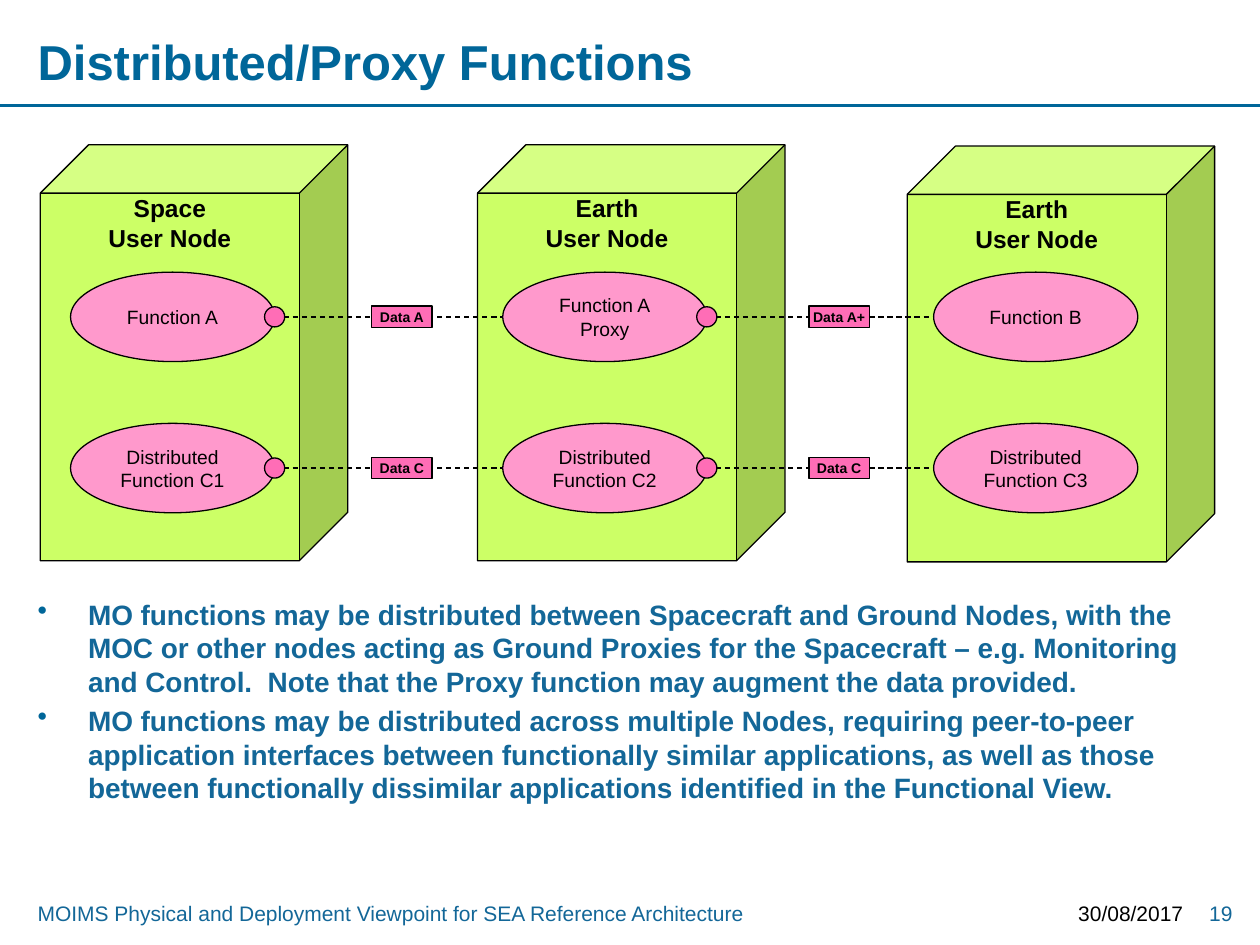
from lxml import etree
from pptx import Presentation
from pptx.dml.color import RGBColor
from pptx.enum.dml import MSO_LINE
from pptx.enum.shapes import MSO_CONNECTOR, MSO_SHAPE
from pptx.enum.text import MSO_ANCHOR, PP_ALIGN
from pptx.oxml.ns import qn
from pptx.util import Inches, Pt

CUBE, OVAL, RECT = MSO_SHAPE.CUBE, MSO_SHAPE.OVAL, MSO_SHAPE.RECTANGLE
STRAIGHT, DASH = MSO_CONNECTOR.STRAIGHT, MSO_LINE.DASH
LEFT, CENTER, RIGHT = PP_ALIGN.LEFT, PP_ALIGN.CENTER, PP_ALIGN.RIGHT
TOP, MIDDLE = MSO_ANCHOR.TOP, MSO_ANCHOR.MIDDLE

BLUE = RGBColor(0x00, 0x66, 0x99)
TEXT_BLUE = RGBColor(0x13, 0x67, 0x98)
BLACK = RGBColor(0, 0, 0)
GREEN = RGBColor(0xCC, 0xFF, 0x66)
PINK = RGBColor(0xFF, 0x99, 0xCC)
HOT_PINK = RGBColor(0xFF, 0x6D, 0xB6)

# Content
TITLE = "Distributed/Proxy Functions"
BULLETS = [
    "MO functions may be distributed between Spacecraft and Ground Nodes, with the MOC or "
    "other nodes acting as Ground Proxies for the Spacecraft – e.g. Monitoring and Control.  "
    "Note that the Proxy function may augment the data provided.",
    "MO functions may be distributed across multiple Nodes, requiring peer-to-peer application "
    "interfaces between functionally similar applications, as well as those between "
    "functionally dissimilar applications identified in the Functional View.",
]
FOOTER = "MOIMS Physical and Deployment Viewpoint for SEA Reference Architecture"
DATE, PAGE = "30/08/2017", "19"

# Each node: cube left, cube top, function left, heading lines
NODES = [
    (0.32, 1.15, 0.56, ["Space", "User Node"]),
    (3.79, 1.15, 3.99, ["Earth", "User Node"]),
    (7.2, 1.16, 7.41, ["Earth", "User Node"]),
]
# Each row: top, one function per node (as paragraphs), data passed across each gap
ROWS = [
    (2.16, [["Function A"], ["Function A\vProxy"], ["Function B"]], ["Data A", "Data A+"]),
    (3.36, [["Distributed", "Function C1"], ["Distributed Function C2"],
            ["Distributed Function C3"]], ["Data C", "Data C"]),
]
LABEL_LEFTS = [2.95, 6.42]

CUBE_W, CUBE_H = 2.44, 3.3
FUNC_W, FUNC_H = 1.62, 0.71
LABEL_W, LABEL_H = 0.48, 0.17
PORT = 0.16

prs = Presentation()
prs.slide_width, prs.slide_height = Inches(10), Inches(7.5)
s = prs.slides.add_slide(prs.slide_layouts[6])


def write(sp, lines, size, color=BLACK, bold=False, align=LEFT, anchor=TOP,
          inset=(0.1, 0.05), wrap=True, bullet=False):
    tf = sp.text_frame
    tf.word_wrap, tf.vertical_anchor = wrap, anchor
    tf.margin_left = tf.margin_right = Inches(inset[0])
    tf.margin_top = tf.margin_bottom = Inches(inset[1])
    for i, line in enumerate(lines):
        p = tf.paragraphs[0] if i == 0 else tf.add_paragraph()
        p.text, p.alignment = line, align
        if bullet:
            if i:
                p.space_before = Pt(size * 0.2)
            pPr = p._p.get_or_add_pPr()
            pPr.set("marL", str(Inches(0.4)))
            pPr.set("indent", str(-Inches(0.4)))
            clr = etree.SubElement(pPr, qn("a:buClr"))
            etree.SubElement(clr, qn("a:srgbClr")).set("val", str(BLUE))
            etree.SubElement(pPr, qn("a:buChar")).set("char", "•")
        for r in p.runs:
            r.font.name, r.font.size, r.font.bold = "Arial", Pt(size), bold
            r.font.color.rgb = color


def text_box(x, y, w, h, lines, size, **fmt):
    write(s.shapes.add_textbox(Inches(x), Inches(y), Inches(w), Inches(h)), lines, size, **fmt)


def shape(kind, x, y, w, h, fill):
    sp = s.shapes.add_shape(kind, Inches(x), Inches(y), Inches(w), Inches(h))
    sp.shadow.inherit = False
    sp.fill.solid()
    sp.fill.fore_color.rgb = fill
    sp.line.color.rgb, sp.line.width = BLACK, Pt(0.75)
    return sp


def line(x1, y1, x2, y2, color, width, dash=None):
    c = s.shapes.add_connector(STRAIGHT, Inches(x1), Inches(y1), Inches(x2), Inches(y2))
    c.line.color.rgb, c.line.width = color, Pt(width)
    if dash:
        c.line.dash_style = dash
    etree.SubElement(c._element.spPr, qn("a:effectLst"))


# Title, rule, bullets and footer
line(0, 0.84, 10, 0.84, BLUE, 1.5)
text_box(0.2, 0.21, 7.95, 0.55, [TITLE], 28, color=BLUE, bold=True, anchor=MIDDLE)
text_box(0.2, 4.69, 9.69, 2.13, BULLETS, 16, color=TEXT_BLUE, bold=True, bullet=True)
text_box(0.2, 7.1, 8.11, 0.3, [FOOTER], 12, color=TEXT_BLUE)
text_box(8.39, 7.1, 1.1, 0.3, [DATE], 12, align=RIGHT)
text_box(9.41, 7.1, 0.47, 0.3, [PAGE], 12, color=TEXT_BLUE, align=RIGHT)

# Nodes
for x, y, _, heading in NODES:
    cube = shape(CUBE, x, y, CUBE_W, CUBE_H, GREEN)
    cube.adjustments[0] = 0.157
    write(cube, heading, 14, bold=True, align=CENTER, inset=(0.1, 0), wrap=False)

# Functions, with the data links between neighbours
func_lefts = [node[2] for node in NODES]
for top, functions, data in ROWS:
    mid = top + FUNC_H / 2
    for x, lines in zip(func_lefts, functions):
        func = shape(OVAL, x, top, FUNC_W, FUNC_H, PINK)
        write(func, lines, 11, align=CENTER, anchor=MIDDLE, inset=(0, 0.05))
    for x, next_x, label_x, name in zip(func_lefts, func_lefts[1:], LABEL_LEFTS, data):
        right = x + FUNC_W
        line(right, mid, next_x, mid, BLACK, 0.75, DASH)
        shape(OVAL, right - PORT / 2, mid - PORT / 2, PORT, PORT, HOT_PINK)
        label = shape(RECT, label_x, mid - LABEL_H / 2, LABEL_W, LABEL_H, HOT_PINK)
        write(label, [name], 8, bold=True, align=CENTER, inset=(0.02, 0.02))

prs.save("out.pptx")
